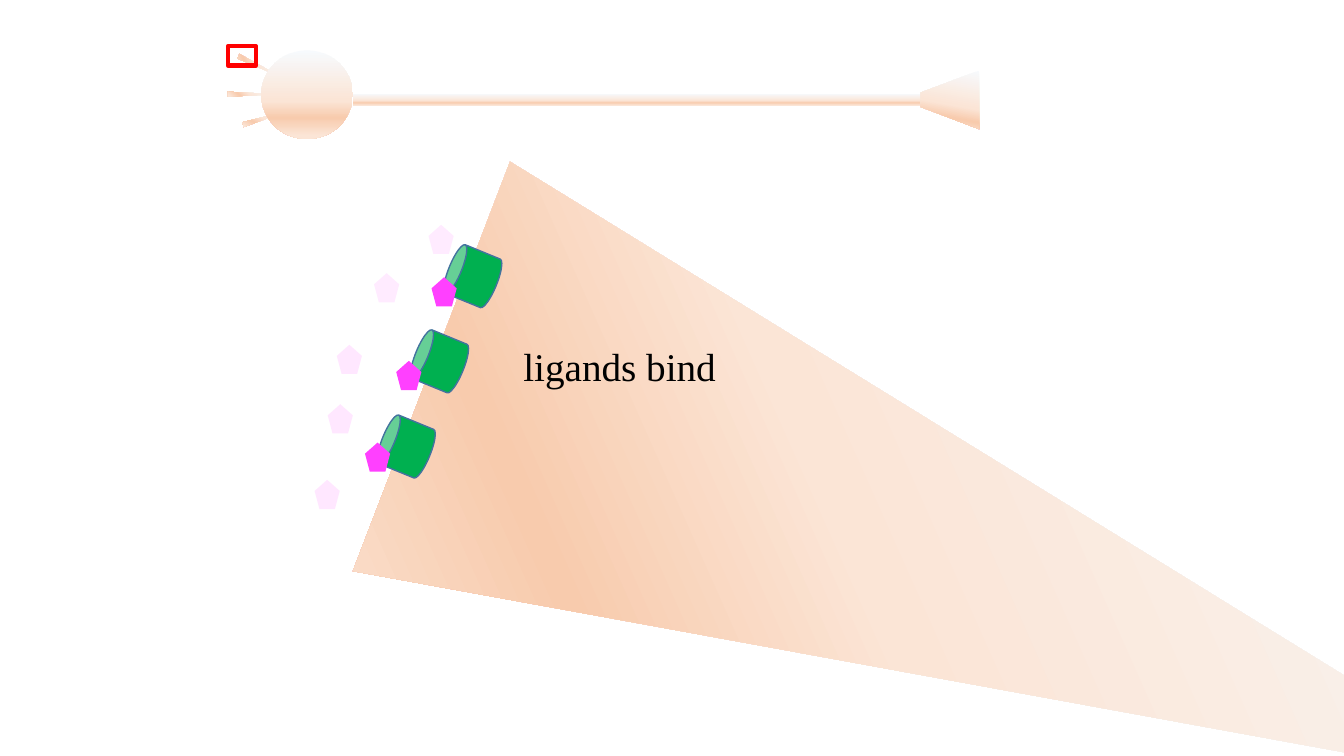
from copy import deepcopy

from lxml import etree
from pptx import Presentation
from pptx.dml.color import RGBColor
from pptx.enum.shapes import MSO_SHAPE
from pptx.enum.text import MSO_AUTO_SIZE, PP_ALIGN
from pptx.oxml.ns import qn
from pptx.util import Inches, Pt

TRI = MSO_SHAPE.ISOSCELES_TRIANGLE
OVAL = MSO_SHAPE.OVAL
RECT = MSO_SHAPE.RECTANGLE
TRAP = MSO_SHAPE.TRAPEZOID
CAN = MSO_SHAPE.CAN
PENTA = MSO_SHAPE.REGULAR_PENTAGON

WIDE, HIGH = 13.33, 7.5
FONT = "Times New Roman"
LABEL = "ligands bind"
SKIN = [(0, "F7FAFD"), (0.57, "FBE5D6"), (0.76, "F8CBAD"), (0.96, "FBE5D6")]
GREEN, BLUE, PINK, RED, BLACK = "00B050", "43739E", "FF40FF", "FF0000", "000000"

# kind, (left, top, width, height), turn, gradient angle
TIP = (0.05, 0.49)
CELL = [
    (TRI, (7.51, -0.08, 4.35, 11.58), 111, 45),
    (TRI, (2.56, 0.42, *TIP), 116, 45),
    (TRI, (2.48, 0.69, *TIP), 90, 45),
    (TRI, (2.62, 0.92, *TIP), 73, 45),
    (OVAL, (2.59, 0.5, 0.91, 0.88), 0, 90),
    (RECT, (3.5, 0.93, 5.64, 0.12), 0, 90),
    (TRAP, (9.13, 0.7, 0.58, 0.58), 270, 190),
]
FLARE = 0.377
FRAME = (2.26, 0.46, 0.28, 0.19)

GATES = 3
GATE = (4.43, 2.49, 0.52, 0.5)
STEP = (-0.33, 0.845)
TURN = 292.3

LIGAND = (0.25, 0.29)
# left, top, opacity in percent
LIGANDS = [
    (4.28, 2.75, 100), (3.62, 4.39, 100), (3.93, 3.58, 100),
    (3.71, 2.71, 10), (4.25, 2.23, 10),
    (3.12, 4.76, 12), (3.25, 4.01, 12), (3.34, 3.42, 12),
]
TEXT = (4.69, 3.35, 2.91, 0.57)


def color(code):
    return RGBColor.from_string(code)


def add(slide, kind, box, turn=0, fill=None, line=None, thick=1):
    shape = slide.shapes.add_shape(kind, *map(Inches, box))
    shape.shadow.inherit = False
    shape.rotation = turn
    if fill:
        shape.fill.solid()
        shape.fill.fore_color.rgb = color(fill)
    else:
        shape.fill.background()
    if line:
        shape.line.color.rgb = color(line)
        shape.line.width = Pt(thick)
    else:
        shape.line.fill.background()
    return shape


def shade(shape, angle):
    """Fill with the skin gradient; angle runs clockwise."""
    fill = shape.fill
    fill.gradient()
    fill.gradient_angle = 360 - angle
    stops = shape._element.spPr.find(qn("a:gradFill")).find(qn("a:gsLst"))
    while len(stops) < len(SKIN):
        stops.append(deepcopy(stops[0]))
    for stop, (place, code) in zip(fill.gradient_stops, SKIN):
        stop.position = place
        stop.color.rgb = color(code)


def fade(shape, share):
    tint = shape._element.spPr.find(qn("a:solidFill"))[0]
    etree.SubElement(tint, qn("a:alpha"), val=str(share * 1000))


def write(slide, box, words):
    area = slide.shapes.add_textbox(*map(Inches, box))
    frame = area.text_frame
    frame.word_wrap = True
    frame.auto_size = MSO_AUTO_SIZE.SHAPE_TO_FIT_TEXT
    para = frame.paragraphs[0]
    para.alignment = PP_ALIGN.CENTER
    run = para.add_run()
    run.text = words
    run.font.name = FONT
    run.font.size = Pt(28)
    run.font.color.rgb = color(BLACK)


def main():
    deck = Presentation()
    deck.slide_width, deck.slide_height = Inches(WIDE), Inches(HIGH)
    slide = deck.slides.add_slide(deck.slide_layouts[6])

    for kind, box, turn, angle in CELL:
        part = add(slide, kind, box, turn)
        shade(part, angle)
        if kind == TRAP:
            part.adjustments[0] = FLARE
    add(slide, RECT, FRAME, line=RED, thick=3)

    left, top, *size = GATE
    for i in range(GATES):
        spot = (left + i * STEP[0], top + i * STEP[1])
        add(slide, CAN, (*spot, *size), TURN, GREEN, BLUE)

    write(slide, TEXT, LABEL)
    for left, top, share in LIGANDS:
        ligand = add(slide, PENTA, (left, top, *LIGAND), fill=PINK)
        if share < 100:
            fade(ligand, share)

    deck.save("out.pptx")


if __name__ == "__main__":
    main()
